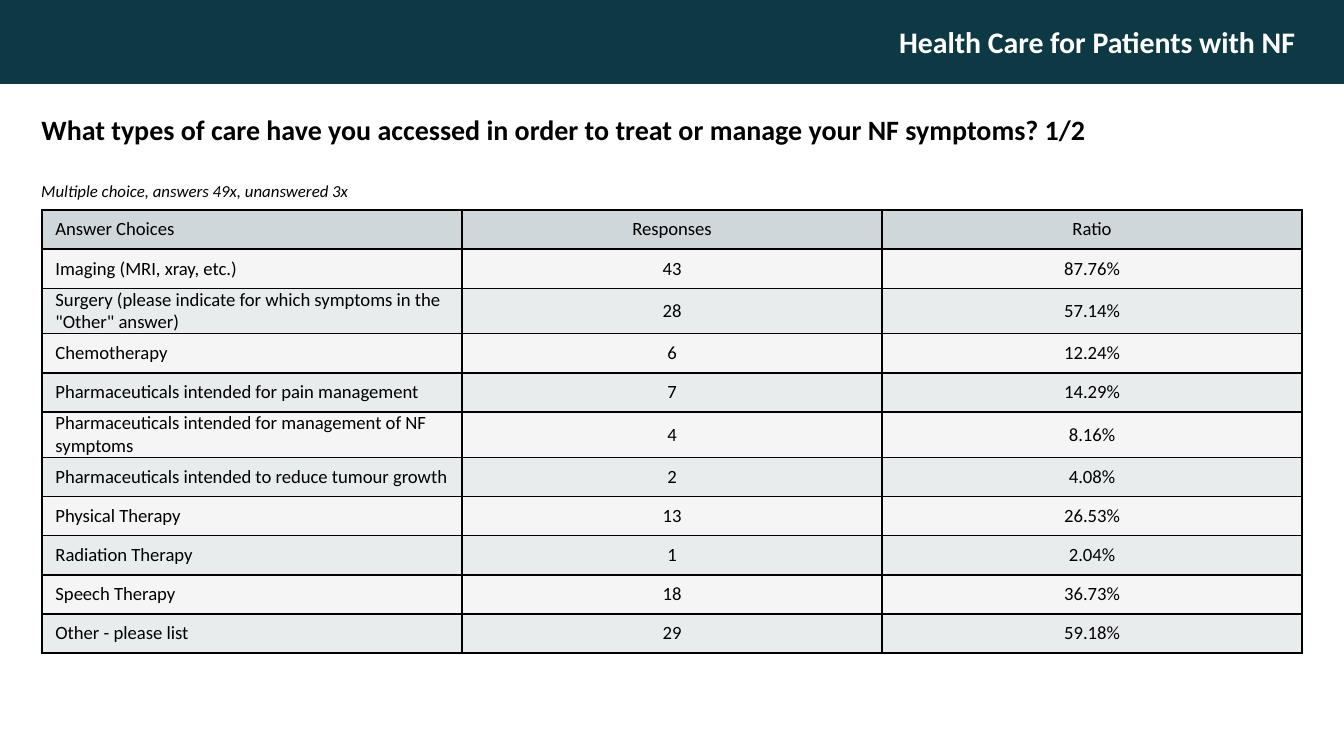
"""Build a slide with a survey question and its table of answers."""
from lxml.etree import SubElement
from pptx import Presentation
from pptx.dml.color import RGBColor
from pptx.enum.shapes import MSO_SHAPE
from pptx.enum.text import MSO_ANCHOR, MSO_AUTO_SIZE, PP_ALIGN
from pptx.oxml.ns import qn
from pptx.util import Pt

COLORS = {
    "band": "0D3944",
    "band_text": "FFFFFF",
    "text": "000000",
    "border": "000000",
    "header_row": "CFD7DA",
    "odd_row": "F5F5F5",
    "even_row": "E8ECED",
}
FONT = "Calibri"
COLUMN_WIDTH = 225
ROW_HEIGHT = 21
CELL_INDENT = 3.6
ANSWERS = [
    ("Answer Choices", "Responses", "Ratio"),
    ("Imaging (MRI, xray, etc.)", "43", "87.76%"),
    ('Surgery (please indicate for which symptoms in the "Other" answer)', "28", "57.14%"),
    ("Chemotherapy", "6", "12.24%"),
    ("Pharmaceuticals intended for pain management", "7", "14.29%"),
    ("Pharmaceuticals intended for management of NF symptoms", "4", "8.16%"),
    ("Pharmaceuticals intended to reduce tumour growth", "2", "4.08%"),
    ("Physical Therapy", "13", "26.53%"),
    ("Radiation Therapy", "1", "2.04%"),
    ("Speech Therapy", "18", "36.73%"),
    ("Other - please list", "29", "59.18%"),
]


def set_attributes(target, values):
    for name, value in values.items():
        setattr(target, name, value)


def write_text(text_frame, text, size, color="text", align=PP_ALIGN.LEFT, **font_values):
    paragraph = text_frame.paragraphs[0]
    paragraph.alignment = align
    run = paragraph.add_run()
    run.text = text
    set_attributes(run.font, {"name": FONT, "size": Pt(size), **font_values})
    run.font.color.rgb = RGBColor.from_string(COLORS[color])
    return paragraph


def format_frame(text_frame, **values):
    set_attributes(text_frame, {
        "word_wrap": True,
        "auto_size": MSO_AUTO_SIZE.NONE,
        "vertical_anchor": MSO_ANCHOR.TOP,
        "margin_left": Pt(7.2),
        "margin_right": Pt(7.2),
        "margin_top": Pt(3.6),
        "margin_bottom": Pt(3.6),
        **values,
    })


def add_band(slide, text):
    band = slide.shapes.add_shape(MSO_SHAPE.RECTANGLE, 0, 0, Pt(720), Pt(45))
    band.shadow.inherit = False
    band.fill.solid()
    band.fill.fore_color.rgb = RGBColor.from_string(COLORS["band"])
    band.line.fill.background()
    format_frame(band.text_frame, vertical_anchor=MSO_ANCHOR.MIDDLE, margin_right=Pt(26))
    write_text(band.text_frame, text, 16, "band_text", PP_ALIGN.RIGHT, bold=True)


def add_question(slide, text):
    title = slide.shapes.title
    set_attributes(title, {"left": Pt(15), "top": Pt(56.5), "width": Pt(690), "height": Pt(37.5)})
    format_frame(title.text_frame)
    write_text(title.text_frame, text, 15, bold=True)


def add_note(slide, text):
    note = slide.shapes.add_textbox(Pt(15), Pt(93.5), Pt(300), Pt(45))
    format_frame(note.text_frame)
    write_text(note.text_frame, text, 9, italic=True)


def add_borders(cell):
    properties = cell._tc.get_or_add_tcPr()
    for position, side in enumerate(("a:lnL", "a:lnR", "a:lnT", "a:lnB")):
        line = properties.makeelement(qn(side), {"w": str(Pt(1))})
        fill = SubElement(line, qn("a:solidFill"))
        SubElement(fill, qn("a:srgbClr"), val=COLORS["border"])
        properties.insert(position, line)


def fill_cell(cell, text, color, is_label):
    set_attributes(cell, {
        "vertical_anchor": MSO_ANCHOR.MIDDLE,
        "margin_left": Pt(CELL_INDENT if is_label else 0),
        "margin_right": 0,
        "margin_top": 0,
        "margin_bottom": 0,
    })
    cell.fill.solid()
    cell.fill.fore_color.rgb = RGBColor.from_string(COLORS[color])
    align = PP_ALIGN.LEFT if is_label else PP_ALIGN.CENTER
    paragraph = write_text(cell.text_frame, text, 10, align=align)
    if is_label:
        paragraph._p.get_or_add_pPr().set("marL", str(Pt(CELL_INDENT)))
    add_borders(cell)


def add_answer_table(slide, answers):
    row_count, column_count = len(answers), len(answers[0])
    table = slide.shapes.add_table(
        row_count, column_count, Pt(22.5), Pt(112.5),
        Pt(COLUMN_WIDTH * column_count), Pt(ROW_HEIGHT * row_count),
    ).table
    set_attributes(table, {"first_row": False, "horz_banding": False})
    for row_index, answer in enumerate(answers):
        table.rows[row_index].height = Pt(ROW_HEIGHT)
        color = "odd_row" if row_index % 2 else "even_row"
        if row_index == 0:
            color = "header_row"
        for column_index, text in enumerate(answer):
            fill_cell(table.cell(row_index, column_index), text, color, column_index == 0)


def main():
    presentation = Presentation()
    set_attributes(presentation, {"slide_width": Pt(720), "slide_height": Pt(405)})
    slide = presentation.slides.add_slide(presentation.slide_layouts[5])
    add_band(slide, "Health Care for Patients with NF")
    add_note(slide, "Multiple choice, answers 49x, unanswered 3x")
    add_answer_table(slide, ANSWERS)
    add_question(
        slide,
        "What types of care have you accessed in order to treat or manage your NF symptoms? 1/2",
    )
    presentation.save("out.pptx")


if __name__ == "__main__":
    main()
